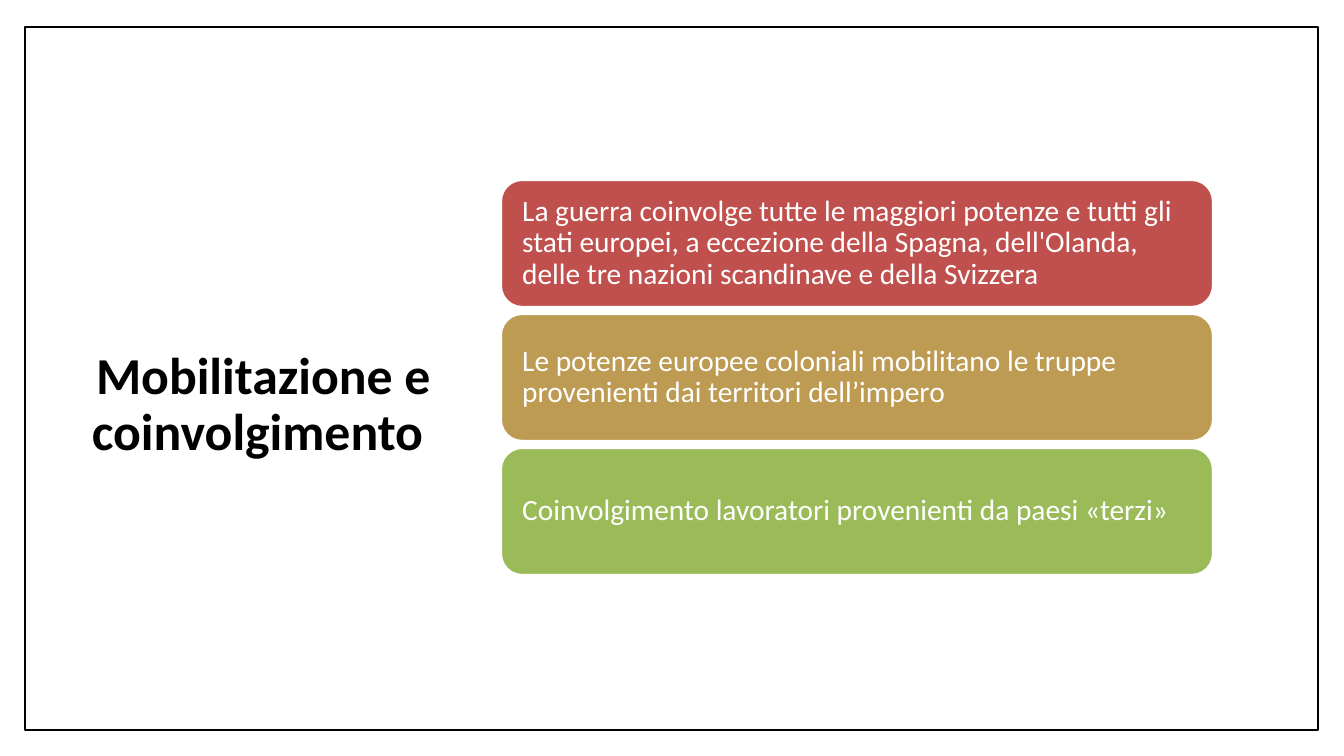
"""Build the slide on mobilisation and involvement in the war."""
import pptx
import pptx.util
import pptx.dml.color
import pptx.enum.shapes
import pptx.enum.text

PX = 9144000 / 1008
HUES = {"black": "000000", "white": "FFFFFF", "red": "C0504D",
        "gold": "BD9B53", "green": "9BBB59"}
FACTS = [
    ("red", "La guerra coinvolge tutte le maggiori potenze e tutti gli stati europei, "
            "a eccezione della Spagna, dell'Olanda, delle tre nazioni scandinave e della Svizzera"),
    ("gold", "Le potenze europee coloniali mobilitano le truppe provenienti dai territori dell’impero"),
    ("green", "Coinvolgimento lavoratori provenienti da paesi «terzi»"),
]
LEFT, TOP, WIDE, HIGH, STEP = 501, 180, 712, 127, 134


def px(*nums):
    return [pptx.util.Emu(round(n * PX)) for n in nums]


def write(shape, text, size, hue, align, pads, bold=False):
    frame = shape.text_frame
    frame.word_wrap = True
    frame.auto_size = pptx.enum.text.MSO_AUTO_SIZE.NONE
    frame.vertical_anchor = pptx.enum.text.MSO_ANCHOR.MIDDLE
    (frame.margin_left, frame.margin_top,
     frame.margin_right, frame.margin_bottom) = px(*pads)
    para = frame.paragraphs[0]
    para.alignment = align
    para.line_spacing = 0.9
    run = para.add_run()
    run.text = text
    run.font.name = "Calibri"
    run.font.size = pptx.util.Pt(size)
    run.font.bold = bold
    run.font.color.rgb = pptx.dml.color.RGBColor.from_string(HUES[hue])


deck = pptx.Presentation()
deck.slide_width, deck.slide_height = px(1344, 756)
slide = deck.slides.add_slide(deck.slide_layouts[5])
kinds = pptx.enum.shapes.MSO_SHAPE
sides = pptx.enum.text.PP_ALIGN

title = slide.shapes.title
title.left, title.top, title.width, title.height = px(72, 68, 371, 618)
write(title, " Mobilitazione e coinvolgimento", 37, "black", sides.CENTER,
      (10, 62, 10, 5), bold=True)

border = slide.shapes.add_shape(kinds.RECTANGLE, *px(25, 27, 1293, 703))
title.element.addprevious(border.element)
looks = [(border, "white", "black", 1)]

for row, (hue, text) in enumerate(FACTS):
    card = slide.shapes.add_shape(kinds.ROUNDED_RECTANGLE,
                                  *px(LEFT, TOP + row * STEP, WIDE, HIGH))
    write(card, text, 21, "white", sides.LEFT, (15, 15, 15, 15))
    looks.append((card, hue, "white", 1.5))

for shape, fill, line, width in looks:
    shape.shadow.inherit = False
    shape.fill.solid()
    shape.fill.fore_color.rgb = pptx.dml.color.RGBColor.from_string(HUES[fill])
    shape.line.color.rgb = pptx.dml.color.RGBColor.from_string(HUES[line])
    shape.line.width = pptx.util.Pt(width)

deck.save("out.pptx")
